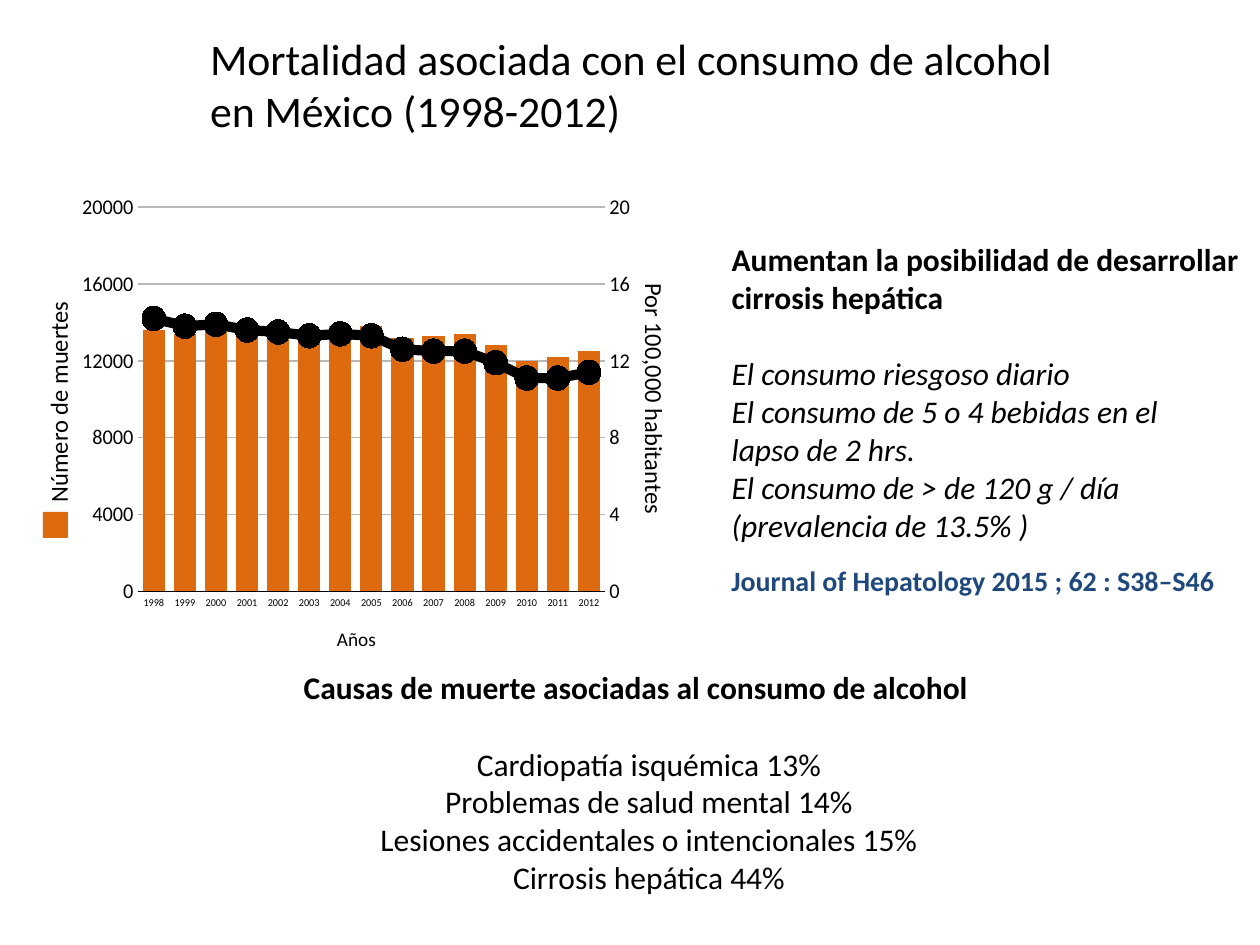
import copy
import pptx
import pptx.chart.data
import pptx.dml.color
import pptx.enum.chart
import pptx.enum.shapes
import pptx.enum.text
import pptx.oxml
import pptx.oxml.ns
import pptx.oxml.xmlchemy
import pptx.util

PX = 914400 / 126
COLORS = {"text": "000000", "bars": "DE6A10", "grid": "B8B8B8", "source": "1F497D"}
RGB = {name: pptx.dml.color.RGBColor.from_string(value) for name, value in COLORS.items()}
LEFT = pptx.enum.text.PP_ALIGN.LEFT
CENTER = pptx.enum.text.PP_ALIGN.CENTER


def place(shape, left, top, width, height):
    geometry = {"left": left, "top": top, "width": width, "height": height}
    for name, value in geometry.items():
        setattr(shape, name, round(value * PX))


def write(shape, lines, margin=None, anchor=pptx.enum.text.MSO_ANCHOR.TOP):
    frame = shape.text_frame
    frame.auto_size = pptx.enum.text.MSO_AUTO_SIZE.NONE
    frame.word_wrap = True
    frame.vertical_anchor = anchor
    if margin is not None:
        for side in ("left", "top", "right", "bottom"):
            setattr(frame, "margin_" + side, round(margin * PX))
    for index, (text, size, color, styles, alignment, gap) in enumerate(lines):
        paragraph = frame.paragraphs[0] if index == 0 else frame.add_paragraph()
        paragraph.alignment = alignment
        paragraph.space_before = pptx.util.Pt(gap)
        if shape.is_placeholder:
            properties = paragraph._p.get_or_add_pPr()
            properties.set("marL", "0")
            properties.set("indent", "0")
            properties.append(pptx.oxml.xmlchemy.OxmlElement("a:buNone"))
        run = paragraph.add_run()
        run.text = text
        run.font.color.rgb = RGB[color]
        font_values = {"name": "Calibri", "size": pptx.util.Pt(size), "bold": False, "italic": False}
        for name, value in {**font_values, **styles}.items():
            setattr(run.font, name, value)


presentation = pptx.Presentation()
presentation.slide_width = round(1260 * PX)
presentation.slide_height = round(945 * PX)
slide = presentation.slides.add_slide(presentation.slide_layouts[3])
title, risks, causes = slide.placeholders

chart_data = pptx.chart.data.CategoryChartData()
chart_data.categories = [str(year) for year in range(1998, 2013)]
chart_data.add_series("Series 1", [
    13600, 13400, 13600, 13600, 13700, 13600, 13800, 13800,
    13200, 13300, 13400, 12800, 12000, 12200, 12500])
chart_data.add_series("Series 2", [
    14.2, 13.8, 13.9, 13.6, 13.5, 13.3, 13.4, 13.3,
    12.6, 12.5, 12.5, 11.9, 11.1, 11.1, 11.4])
chart = slide.shapes.add_chart(
    pptx.enum.chart.XL_CHART_TYPE.COLUMN_CLUSTERED,
    *[round(value * PX) for value in (82, 185, 548, 442)], chart_data).chart
chart.has_legend = False
chart.has_title = False
chart.font.name = "Calibri"
chart.font.size = pptx.util.Pt(10)
chart.font.color.rgb = RGB["text"]

no_tick = pptx.enum.chart.XL_TICK_MARK.NONE
axis_formats = (
    (chart.category_axis, 6, {"major_tick_mark": no_tick}),
    (chart.value_axis, 12, {
        "major_tick_mark": no_tick, "minimum_scale": 0, "maximum_scale": 20000,
        "major_unit": 4000, "has_major_gridlines": True}),
)
for axis, size, values in axis_formats:
    for name, value in values.items():
        setattr(axis, name, value)
    axis.tick_labels.font.size = pptx.util.Pt(size)
    axis.tick_labels.font.name = "Calibri"
    axis.tick_labels.font.color.rgb = RGB["text"]
chart.value_axis.format.line.fill.background()
line_formats = (
    (chart.category_axis.format.line, "text"),
    (chart.value_axis.major_gridlines.format.line, "grid"),
)
for line, color in line_formats:
    line.color.rgb = RGB[color]
    line.width = pptx.util.Pt(1)

bar_plot = chart.plots[0]
bar_plot.gap_width = 40
bar_plot.vary_by_categories = False
bar_plot.series[0].format.fill.solid()
bar_plot.series[0].format.fill.fore_color.rgb = RGB["bars"]

plot_area = chart._chartSpace.xpath("c:chart/c:plotArea")[0]
bar_chart = plot_area.xpath("c:barChart")[0]
rate_series = bar_chart.xpath("c:ser")[1]
for element in rate_series.xpath("c:invertIfNegative"):
    rate_series.remove(element)
line_chart = pptx.oxml.parse_xml(
    "<c:lineChart %s><c:grouping val='standard'/><c:varyColors val='0'/>"
    "<c:marker val='1'/><c:axId val='5001'/><c:axId val='5002'/></c:lineChart>"
    % pptx.oxml.ns.nsdecls("c"))
line_chart.insert(2, rate_series)
bar_chart.addnext(line_chart)

right_axis = copy.deepcopy(chart.value_axis._element)
hidden_axis = copy.deepcopy(chart.category_axis._element)
right_axis.remove(right_axis.xpath("c:majorGridlines")[0])
secondary_values = (
    (right_axis, {"c:axId": "5002", "c:crossAx": "5001", "c:axPos": "r", "c:crosses": "max",
                  "c:scaling/c:max": "20", "c:majorUnit": "4"}),
    (hidden_axis, {"c:axId": "5001", "c:crossAx": "5002", "c:delete": "1"}),
)
for axis, values in secondary_values:
    for query, value in values.items():
        axis.xpath(query)[0].set("val", value)
chart.value_axis._element.addnext(right_axis)
right_axis.addnext(hidden_axis)

rate = chart.plots[1].series[0]
rate.smooth = False
rate.format.line.color.rgb = RGB["text"]
rate.format.line.width = pptx.util.Pt(6)
rate.marker.style = pptx.enum.chart.XL_MARKER_STYLE.CIRCLE
rate.marker.size = 14
rate.marker.format.fill.solid()
rate.marker.format.fill.fore_color.rgb = RGB["text"]
rate.marker.format.line.color.rgb = RGB["text"]

for element in plot_area.xpath("c:layout"):
    plot_area.remove(element)
plot_area.insert(0, pptx.oxml.parse_xml(
    "<c:layout %s><c:manualLayout><c:layoutTarget val='inner'/><c:xMode val='edge'/>"
    "<c:yMode val='edge'/><c:x val='0.08'/><c:y val='0.05'/><c:w val='0.88'/>"
    "<c:h val='0.87'/></c:manualLayout></c:layout>" % pptx.oxml.ns.nsdecls("c")))

legend_key = slide.shapes.add_shape(
    pptx.enum.shapes.MSO_SHAPE.RECTANGLE, *[round(value * PX) for value in (43, 512, 25, 26)])
legend_key.shadow.inherit = False
legend_key.fill.solid()
legend_key.fill.fore_color.rgb = RGB["bars"]
legend_key.line.fill.background()

chart_labels = (
    ("Por 100,000 habitantes", 14, 90, (444, 469, 422, 40)),
    ("Número de muertes", 14, 270, (-153, 277, 422, 39)),
    ("Años", 11, 0, (332, 622, 60, 33)),
)
middle = pptx.enum.text.MSO_ANCHOR.MIDDLE
for text, size, rotation, box in chart_labels:
    label = slide.shapes.add_textbox(0, 0, 0, 0)
    place(label, *box)
    label.rotation = rotation
    write(label, [(text, size, "text", {}, LEFT, 0)], 5, middle)

place(title, 205, 26, 891, 116)
write(title, [("Mortalidad asociada con el consumo de alcohol en México (1998-2012)",
               25, "text", {}, LEFT, 0)], 5, middle)

bold = {"bold": True}
italic = {"italic": True}
place(risks, 719, 234, 543, 318)
write(risks, [
    (text, 18, "text", styles, LEFT, gap) for text, styles, gap in (
        ("Aumentan la posibilidad de desarrollar", bold, 0),
        ("cirrosis hepática", bold, 0),
        ("El consumo riesgoso diario", italic, 22),
        ("El consumo de 5 o 4 bebidas en el", italic, 0),
        ("lapso de 2 hrs.", italic, 0),
        ("El consumo de > de 120 g / día", italic, 0),
        ("(prevalencia de 13.5% )", italic, 0))])

source = slide.shapes.add_textbox(0, 0, 0, 0)
place(source, 719, 557, 525, 47)
write(source, [("Journal of Hepatology 2015 ; 62 : S38–S46", 16, "source", bold, LEFT, 0)])

place(causes, 291, 662, 716, 280)
write(causes, [
    (text, 18, "text", styles, alignment, gap) for text, styles, alignment, gap in (
        ("Causas de muerte asociadas al consumo de alcohol", bold, LEFT, 0),
        ("Cardiopatía isquémica 13%", {}, CENTER, 22),
        ("Problemas de salud mental 14%", {}, CENTER, 0),
        ("Lesiones accidentales o intencionales 15%", {}, CENTER, 0),
        ("Cirrosis hepática 44%", {}, CENTER, 0))])

presentation.save("out.pptx")
